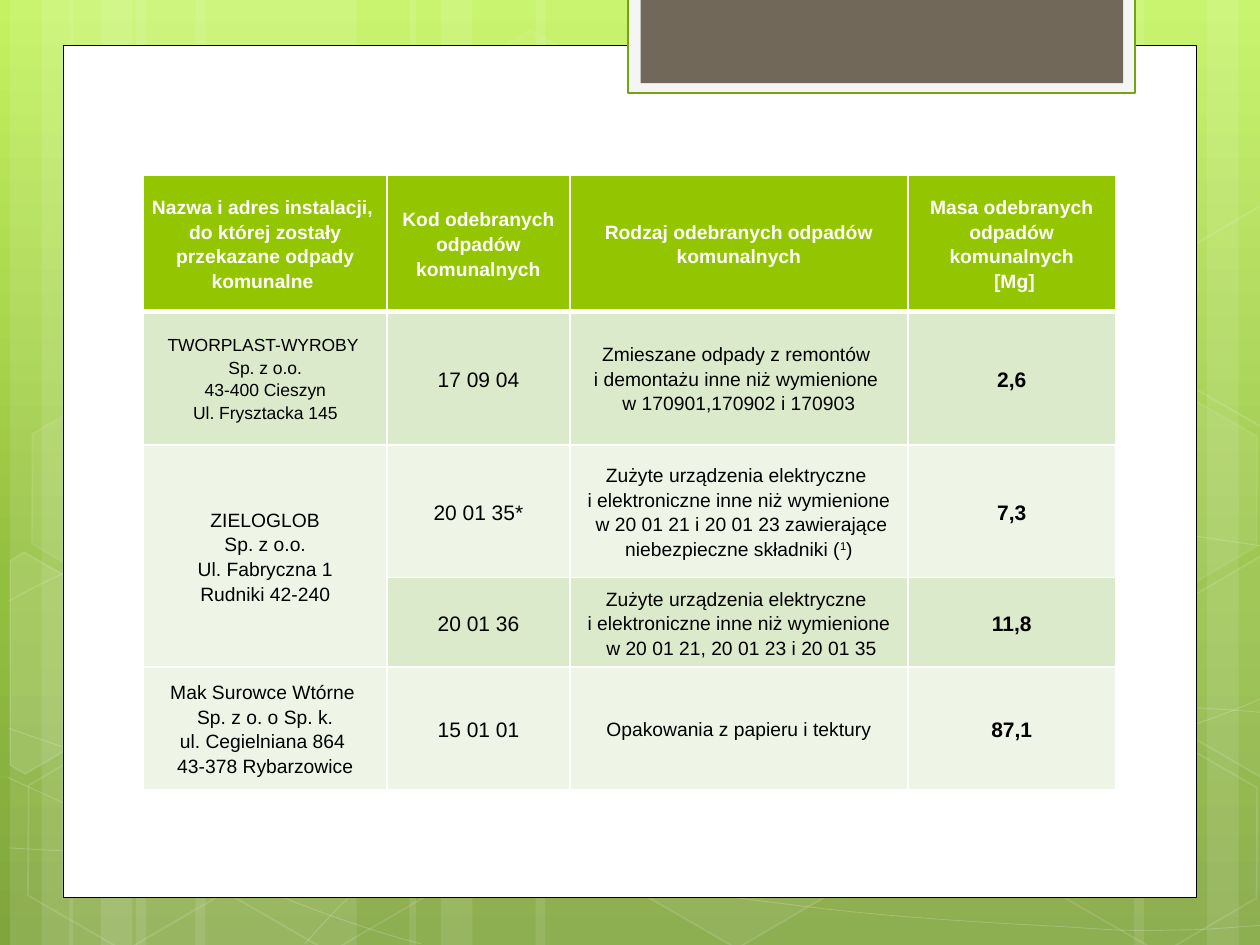
"""Build a slide with a table of collected municipal waste on a green patterned background."""
from copy import deepcopy
from math import cos, radians, sin

from lxml.etree import SubElement
from pptx import Presentation
from pptx.dml.color import RGBColor
from pptx.enum.shapes import MSO_SHAPE as Shape
from pptx.enum.text import MSO_ANCHOR as Anchor, PP_ALIGN as Align
from pptx.oxml.ns import qn
from pptx.util import Inches, Pt

WHITE = RGBColor(0xFF, 0xFF, 0xFF)
BLACK = RGBColor(0x00, 0x00, 0x00)
LIME = RGBColor(0xC3, 0xF3, 0x5F)
GRASS = RGBColor(0x93, 0xBF, 0x3F)
OLIVE = RGBColor(0x81, 0xA5, 0x3E)
HEADER = RGBColor(0x94, 0xC6, 0x00)
DARK_BAND = RGBColor(0xDC, 0xEA, 0xCC)
LIGHT_BAND = RGBColor(0xEE, 0xF5, 0xE7)
TAB = RGBColor(0xF5, 0xF5, 0xF5)
TAB_EDGE = RGBColor(0x74, 0xA5, 0x10)
TAUPE = RGBColor(0x71, 0x68, 0x5A)

presentation = Presentation()
presentation.slide_width = Inches(10)
presentation.slide_height = Inches(7.5)
CELL = presentation.slide_width / 100
slide = presentation.slides.add_slide(presentation.slide_layouts[6])
shapes = slide.shapes


def paint(fill, color, opacity=100):
    """Give a fill one colour, or none when the opacity is zero."""
    if not opacity:
        fill.background()
        return
    fill.solid()
    fill.fore_color.rgb = color
    if opacity < 100:
        color_element = fill._xPr.find(qn("a:solidFill"))[0]
        SubElement(color_element, qn("a:alpha")).set("val", str(opacity * 1000))


def add_outline(points, closed, fill_opacity, line_width, line_opacity):
    """Draw a white freeform through points measured in grid cells."""
    scaled = [(round(x * CELL), round(y * CELL)) for x, y in points]
    builder = shapes.build_freeform(*scaled[0])
    builder.add_line_segments(scaled[1:], close=closed)
    shape = builder.convert_to_shape()
    shape.shadow.inherit = False
    paint(shape.fill, WHITE, fill_opacity)
    shape.line.width = Pt(line_width)
    paint(shape.line.fill, WHITE, line_opacity)
    return shape


background = slide.background.fill
background.gradient()
background.gradient_angle = 270
stop_list = background._fill._gradFill.gsLst
stop_list.append(deepcopy(stop_list[-1]))
for stop, color, position in zip(background.gradient_stops, (LIME, GRASS, OLIVE), (0, 0.62, 1)):
    stop.color.rgb = color
    stop.position = position

bands = [(10.8, 17.5, 0), (0.8, 5, 0), (3.3, 8.3, 0), (15.5, 17.5, 0), (5.5, 5, 0), (8, 8.3, 0),
         (73.3, 17.5, 180), (95.8, 5, 180), (90, 8.3, 180), (42.5, 30.8, 0), (32.5, 5, 0), (35, 8.3, 0)]
for left, width, rotation in bands:
    band = shapes.add_shape(Shape.RECTANGLE, round(left * CELL), 0, round(width * CELL), presentation.slide_height)
    band.shadow.inherit = False
    band.rotation = rotation
    paint(band.fill, WHITE, 10)
    band.line.fill.background()

curves = [
    [(0.7, 67.3), (6.1, 67.6), (11.5, 67.9), (19, 67.8), (26.5, 67.7), (35.8, 67.5), (45.8, 66.5),
     (55.8, 65.5), (70, 63.6), (79.2, 61.7), (88.3, 59.8), (97.7, 56.8), (100.7, 55.1)],
    [(0.7, 47.7), (3.6, 46.1), (6.5, 44.6), (12.1, 43.1), (17.8, 41.6), (25.9, 39.4), (34.7, 38.7),
     (43.6, 38), (54.4, 37.9), (65.4, 38.7), (76.4, 39.5), (94.7, 42.6), (100.7, 43.4)],
    [(0.6, 61.7), (12.7, 67.2), (24.7, 72.7), (33.4, 74.9)],
    [(0.7, 57.8), (3.8, 58.9), (7, 60), (12.8, 61.6), (18.6, 63.1), (27.3, 65.6), (35.7, 67.3),
     (44, 69), (54.5, 70.8), (62.8, 71.8), (71.1, 72.9), (80, 73.3), (85.3, 73.6),
     (90.5, 74), (91.9, 73.8), (94.5, 73.8), (97.1, 73.7), (98.9, 73.5), (100.7, 73.4)],
    [(24.2, 74.9), (26, 72.9), (27.8, 70.9), (30.2, 69.1), (32.6, 67.3), (36, 65.3), (38.8, 63.9),
     (41.6, 62.5), (43.3, 61.9), (47, 60.9), (50.6, 59.9), (57.3, 58.5), (60.8, 57.8),
     (64.4, 57.1), (64.9, 57.1), (68, 56.9), (71.1, 56.6), (76, 56.3), (79.4, 56.2),
     (82.9, 56.1), (88.6, 56.2), (88.6, 56.2), (90.8, 56.2), (93.1, 56.2), (95.3, 56.2),
     (97.1, 56.3), (98.8, 56.4), (100.6, 56.6)],
]
for knots in curves:
    curve = add_outline(knots, False, 0, 0.5, 20)
    outline_element = next(curve._element.iter(qn("a:path")))
    segments = outline_element.findall(qn("a:lnTo"))
    for first in range(0, len(segments), 3):
        bezier = SubElement(outline_element, qn("a:cubicBezTo"))
        for segment in segments[first:first + 3]:
            bezier.append(segment[0])
            outline_element.remove(segment)

hexagons = [(33.4, 3.6, 4, 8), (49.7, 58.9, 6, 12), (1.1, 59.1, 0, 12), (1.4, 31.2, 7, 8),
            (17.4, 59.2, 0, 12), (75.3, 45.3, 10, 12), (83.4, 59.3, 0, 12), (83.4, 31.4, 7, 8)]
for left, top, fill_opacity, line_opacity in hexagons:
    hexagon_box = [round(value * CELL) for value in (left, top, 17.5, 15.2)]
    hexagon = shapes.add_shape(Shape.HEXAGON, *hexagon_box)
    hexagon.shadow.inherit = False
    hexagon.adjustments[0] = 0.285
    hexagon.rotation = 30
    paint(hexagon.fill, WHITE, fill_opacity)
    hexagon.line.width = Pt(1)
    paint(hexagon.line.fill, WHITE, line_opacity)

right_outline = [(92.6, 48.5), (100.1, 44.1), (100.9, 44.6), (100.9, 61.3), (100.2, 61.7), (92.6, 57.3)]
cut_hexagons = [
    ([(0.8, 44.5), (1.9, 43.8), (9.6, 48.2), (9.5, 57), (2, 61.4), (0.8, 60.7)], (3.6, 53.5), 10),
    (right_outline, (98.5, 52), 4),
    ([(x, y - 27.8) for x, y in right_outline], (98.5, 24.2), 0),
]
COSINE, SINE = cos(radians(30)), sin(radians(30))
for outline, (center_x, center_y), fill_opacity in cut_hexagons:
    offsets = [(x - center_x, y - center_y) for x, y in outline]
    upright = [(center_x + x * COSINE + y * SINE, center_y - x * SINE + y * COSINE) for x, y in offsets]
    add_outline(upright, True, fill_opacity, 1, 12).rotation = 30

panels = [((5, 3.6, 90, 67.65), WHITE, BLACK, 0.5),
          ((49.85, -0.2, 40.25, 7.6), TAB, TAB_EDGE, 1.25),
          ((50.85, -0.2, 38.3, 6.8), TAUPE, None, 0)]
for box, color, edge, width in panels:
    panel = shapes.add_shape(Shape.RECTANGLE, *[round(value * CELL) for value in box])
    panel.shadow.inherit = False
    paint(panel.fill, color)
    panel.line.fill.background()
    if edge is not None:
        panel.line.color.rgb = edge
        panel.line.width = Pt(width)

EQUIPMENT = "Zużyte urządzenia elektryczne \ni elektroniczne inne niż wymienione\n "
rows = [
    (10.8, HEADER, [["Nazwa i adres instalacji, \ndo której zostały przekazane odpady komunalne "],
                    ["Kod odebranych odpadów komunalnych"], ["Rodzaj odebranych odpadów komunalnych"],
                    ["Masa odebranych odpadów komunalnych", " [Mg]"]]),
    (10.6, DARK_BAND, [["TWORPLAST-WYROBY \nSp. z o.o.\n43-400 Cieszyn\nUl. Frysztacka 145"], ["17 09 04"],
                       ["Zmieszane odpady z remontów \ni demontażu inne niż wymienione \n"
                        "w 170901,170902 i 170903"], ["2,6"]]),
    (10.55, LIGHT_BAND, [["ZIELOGLOB", "Sp. z o.o.", "Ul. Fabryczna 1\nRudniki 42-240"], ["20 01 35*"],
                         [EQUIPMENT + "w 20 01 21 i 20 01 23 zawierające niebezpieczne składniki (^1^)"], ["7,3"]]),
    (7.1, DARK_BAND, [[], ["20 01 36"], [EQUIPMENT + "w 20 01 21, 20 01 23 i 20 01 35"], ["11,8"]]),
    (9.7, LIGHT_BAND, [["Mak Surowce Wtórne \nSp. z o. o Sp. k.\nul. Cegielniana 864 \n43-378 Rybarzowice"],
                       ["15 01 01"], ["Opakowania z papieru i tektury"], ["87,1"]]),
]
column_widths = (19.3, 14.55, 26.8, 16.5)
table_box = [round(value * CELL) for value in (11.4, 13.9, sum(column_widths), sum(row[0] for row in rows))]
table = shapes.add_table(len(rows), len(column_widths), *table_box).table
for column, width in zip(table.columns, column_widths):
    column.width = round(width * CELL)
table.cell(2, 0).merge(table.cell(3, 0))

for row_index, (height, color, texts) in enumerate(rows):
    table.rows[row_index].height = round(height * CELL)
    is_header = row_index == 0
    for column_index, paragraphs in enumerate(texts):
        cell = table.cell(row_index, column_index)
        cell.vertical_anchor = Anchor.MIDDLE
        cell.margin_left = cell.margin_right = Inches(0.05)
        cell.margin_top = cell.margin_bottom = 0
        for side in ("lnL", "lnR", "lnT", "lnB"):
            is_thick = (row_index, side) in ((0, "lnB"), (1, "lnT"))
            border = SubElement(cell._tc.tcPr, qn(f"a:{side}"), w=str(Pt(3 if is_thick else 1)))
            border_fill = SubElement(border, qn("a:solidFill"))
            SubElement(border_fill, qn("a:srgbClr"), val=str(WHITE))
        paint(cell.fill, color)
        size = 10 if (row_index, column_index) == (1, 0) else 12 if column_index % 2 and not is_header else 11
        for index, text in enumerate(paragraphs):
            paragraph = cell.text_frame.add_paragraph() if index else cell.text_frame.paragraphs[0]
            paragraph.alignment = Align.CENTER
            paragraph.line_spacing = 1.15
            if row_index == len(rows) - 1:
                paragraph.space_after = Pt(10)
            for line_index, line in enumerate(text.split("\n")):
                if line_index:
                    paragraph.add_line_break()
                for part_index, part in enumerate(line.split("^")):
                    run = paragraph.add_run()
                    run.text = part
                    run.font.name = "Arial"
                    run.font.size = Pt(size)
                    run.font.bold = is_header or column_index == 3
                    run.font.color.rgb = WHITE if is_header else BLACK
                    if part_index == 1:
                        run.font._element.set("baseline", "30000")

presentation.save("out.pptx")
